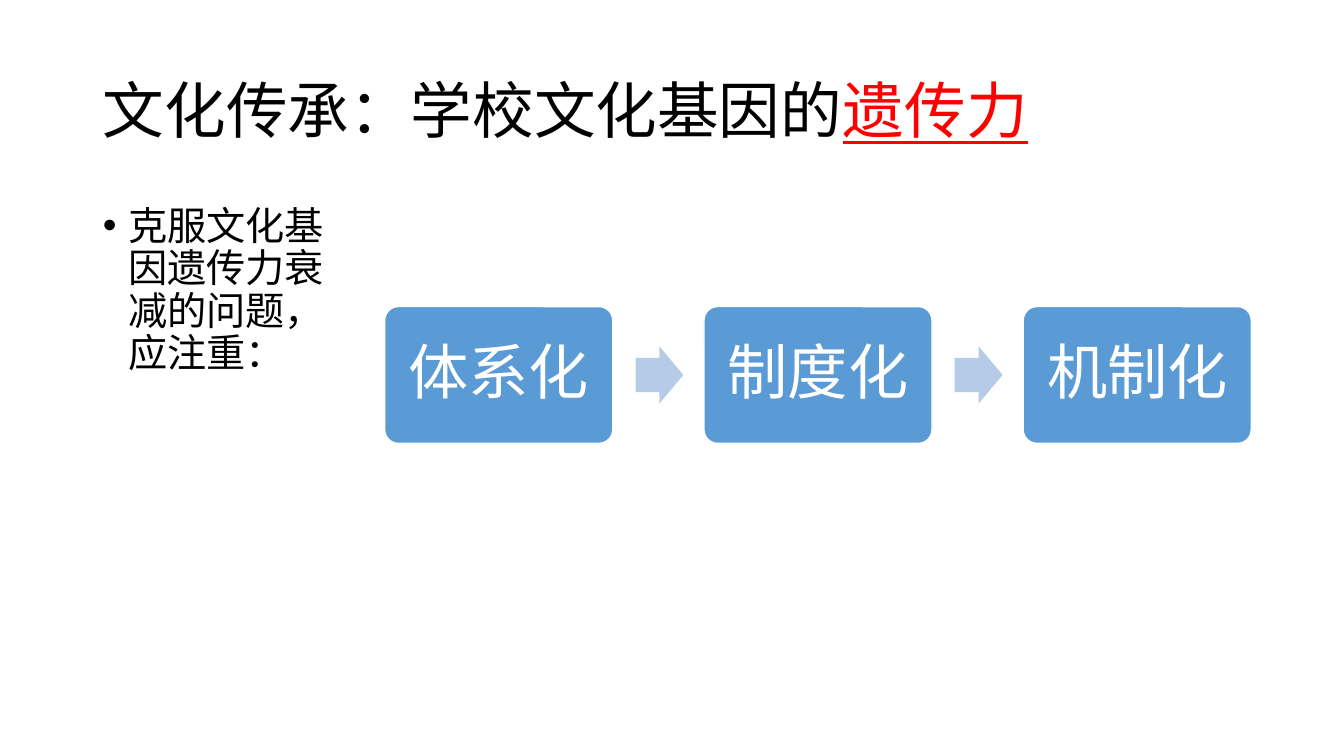
import pptx
import pptx.util
import pptx.dml.color
import pptx.enum.shapes
import pptx.enum.text
import pptx.oxml.ns

RGB = pptx.dml.color.RGBColor
BLACK = RGB(0x00, 0x00, 0x00)
WHITE = RGB(0xFF, 0xFF, 0xFF)
RED = RGB(0xFF, 0x00, 0x00)
BLUE = RGB(0x5B, 0x9B, 0xD5)
PALE_BLUE = RGB(0xB5, 0xCB, 0xE7)

SHAPE = pptx.enum.shapes.MSO_SHAPE
ANCHOR = pptx.enum.text.MSO_ANCHOR
ALIGN = pptx.enum.text.PP_ALIGN
Inches = pptx.util.Inches
Pt = pptx.util.Pt

WIDTH, HEIGHT = 13.33, 7.5
MARGIN = 0.069 * WIDTH
STEPS = ["体系化", "制度化", "机制化"]


def set_attrs(obj, formats):
    for name, value in formats.items():
        setattr(obj, name, value)


def place(sp, box):
    names = ("left", "top", "width", "height")
    set_attrs(sp, dict(zip(names, map(Inches, box))))


def write(sp, runs, size, align, anchor, before=0):
    tf = sp.text_frame
    set_attrs(tf, {"word_wrap": True, "vertical_anchor": anchor,
                   "auto_size": pptx.enum.text.MSO_AUTO_SIZE.NONE})
    p = tf.paragraphs[0]
    set_attrs(p, {"alignment": align, "line_spacing": 0.9,
                  "space_before": Pt(before)})
    for text, color, underline in runs:
        r = p.add_run()
        r.text = text
        set_attrs(r.font, {"name": "Calibri", "size": Pt(size),
                           "underline": underline})
        r.font.color.rgb = color
    return p


def add_title(s, box):
    sp = s.shapes.title
    place(sp, box)
    runs = [("文化传承：学校文化基因的", BLACK, None), ("遗传力", RED, True)]
    write(sp, runs, 44, ALIGN.LEFT, ANCHOR.MIDDLE)


def add_body(s, box):
    sp = s.placeholders[1]
    place(sp, box)
    runs = [("克服文化基因遗传力衰减的问题，应注重：", BLACK, None)]
    p = write(sp, runs, 28, ALIGN.LEFT, ANCHOR.TOP, 10)
    pPr = p._p.get_or_add_pPr()
    indent = Inches(0.25)
    pPr.set("marL", str(indent))
    pPr.set("indent", str(-indent))
    bullet = pptx.oxml.ns.qn("a:buChar")
    pPr.append(pPr.makeelement(bullet, {"char": "•"}))


def add_block(s, kind, box, color, adjustments):
    sp = s.shapes.add_shape(kind, *map(Inches, box))
    sp.shadow.inherit = False
    sp.fill.solid()
    sp.fill.fore_color.rgb = color
    sp.line.fill.background()
    for i, value in enumerate(adjustments):
        sp.adjustments[i] = value
    return sp


def add_flow(s, box):
    x, y, w, h = box
    gap = 0.4
    step = w / (len(STEPS) + gap * (len(STEPS) - 1))
    middle = y + h / 2
    step_h, arrow_h = 0.6 * step, 0.25 * step
    for i, text in enumerate(STEPS):
        left = x + i * (1 + gap) * step
        sp = add_block(s, SHAPE.ROUNDED_RECTANGLE,
                       (left, middle - step_h / 2, step, step_h), BLUE, [0.1])
        sp.line.color.rgb = WHITE
        sp.line.width = Pt(1)
        sides = ("left", "top", "right", "bottom")
        set_attrs(sp.text_frame,
                  {f"margin_{side}": Inches(0.18) for side in sides})
        write(sp, [(text, WHITE, None)], 43, ALIGN.CENTER, ANCHOR.MIDDLE)
        if i < len(STEPS) - 1:
            add_block(s, SHAPE.RIGHT_ARROW,
                      (left + 1.1 * step, middle - arrow_h / 2,
                       0.21 * step, arrow_h), PALE_BLUE, [0.6, 0.5])


def main():
    prs = pptx.Presentation()
    set_attrs(prs, {"slide_width": Inches(WIDTH),
                    "slide_height": Inches(HEIGHT)})
    s = prs.slides.add_slide(prs.slide_layouts[1])
    content_w = WIDTH - 2 * MARGIN
    body_top, body_h = 2, 4.76
    flow_x = MARGIN + 0.252 * content_w
    add_title(s, (MARGIN, 0.4, content_w, 1.45))
    add_body(s, (MARGIN, body_top, 0.225 * content_w, body_h))
    add_flow(s, (flow_x, 0.405 * HEIGHT, WIDTH - MARGIN - flow_x,
                 0.182 * HEIGHT))
    prs.save("out.pptx")


if __name__ == "__main__":
    main()
